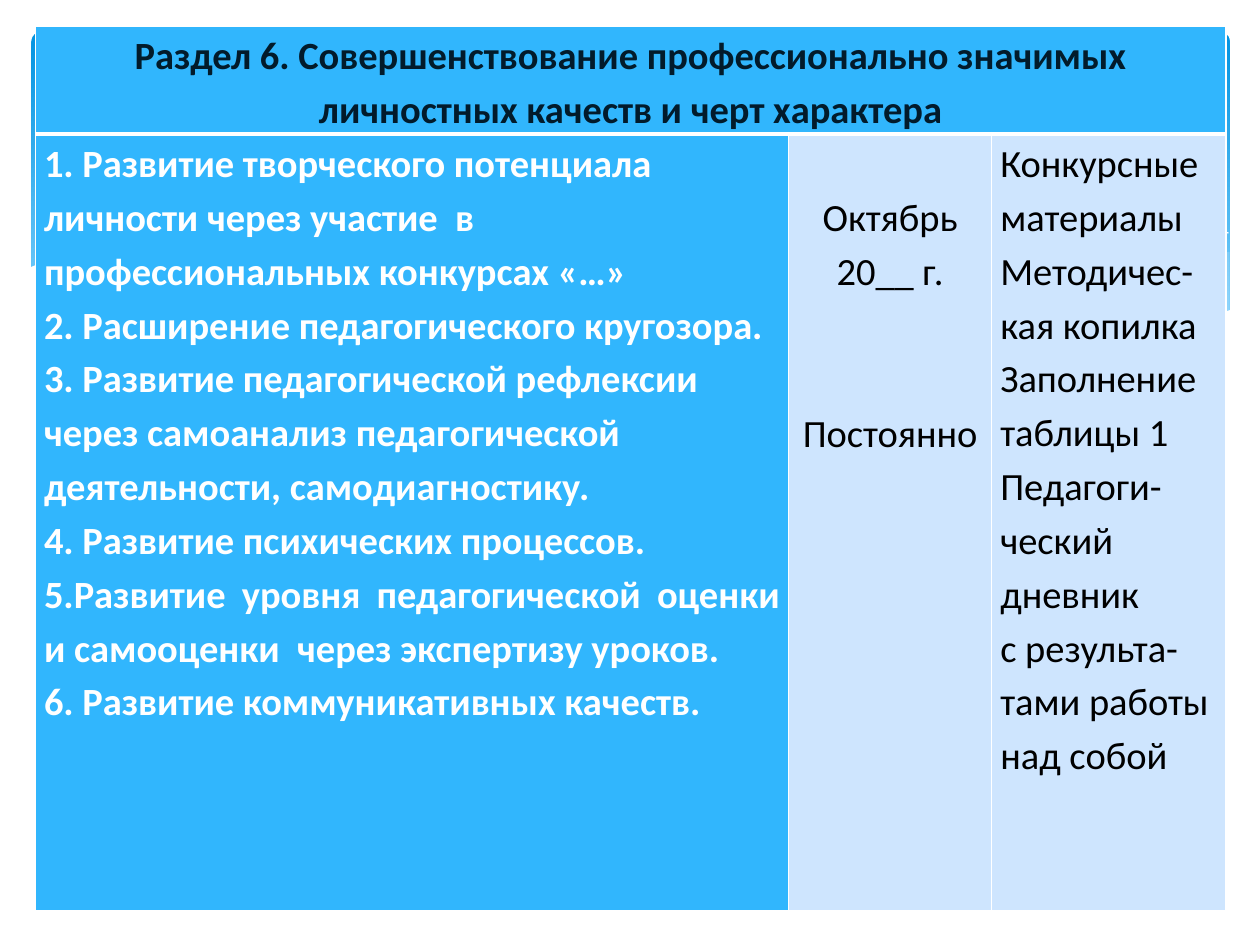
import pptx
import pptx.dml.color
import pptx.enum.shapes
import pptx.enum.text
import pptx.oxml
import pptx.oxml.ns
import pptx.util

Pt = pptx.util.Pt
ALIGN = pptx.enum.text.PP_ALIGN

COLORS = {
    "band_top": "0293E0",
    "band_bottom": "83D3FE",
    "wave": "C6E7FC",
    "white": "FFFFFF",
    "accent": "31B6FD",
    "pale": "CEE5FE",
    "heading": "021B2B",
    "black": "000000",
}

BACK_WAVE = [(684, 126), (602, 143), (524, 161), (458, 173), (518, 180), (568, 182),
             (616, 179), (655, 171), (684.7, 160), (684.7, 126)]
FRONT_WAVE = [(625, 179), (515, 160), (435, 142), (362, 126), (300, 118), (242, 115),
              (188, 119.5), (258, 131), (335, 149), (415, 166), (482, 176), (547, 182),
              (593, 181)]
LONG_CURVE = [(204, 122), (243, 118), (306, 117), (382, 124), (461, 135), (529, 150),
              (580, 163), (635, 178)]
SHORT_CURVE = [(423, 167), (500, 147), (584, 129), (637, 120), (684, 115)]
WHITE_WAVE = [(685.4, 159), (644, 173), (594, 180), (542, 181), (463, 173), (382, 158),
              (304, 140), (227, 124), (162, 116), (109, 114.5), (58, 118), (19, 127),
              (-1.4, 135), (-1.4, 219), (685.4, 219)]

HEADING = ("Раздел 6. Совершенствование профессионально значимых "
           "личностных качеств и черт характера")
TASKS = [
    "1. Развитие творческого потенциала личности через участие  в "
    "профессиональных конкурсах «…»",
    "2. Расширение педагогического кругозора.",
    "3. Развитие педагогической рефлексии через самоанализ педагогической "
    "деятельности, самодиагностику.",
    "4. Развитие психических процессов.",
    "5.Развитие уровня педагогической оценки и самооценки  через экспертизу уроков.",
    "6. Развитие коммуникативных качеств.",
]
JUSTIFIED_TASK = 4
RESULTS = [
    "Конкурсные материалы",
    "Методичес-кая копилка",
    "Заполнение таблицы 1",
    "Педагоги-ческий дневник",
    "с результа-тами работы над собой",
]
LINE_PITCH = 30.9


def rgb(name):
    return pptx.dml.color.RGBColor.from_string(COLORS[name])


def add_curve(slide, left, top, points, fill=None, opacity=100):
    corners = [(Pt(left + x), Pt(top + y)) for x, y in points]
    builder = slide.shapes.build_freeform(*corners[0])
    builder.add_line_segments(corners[1:], close=fill is not None)
    curve = builder.convert_to_shape()
    curve.shadow.inherit = False
    if fill is None:
        curve.fill.background()
        curve.line.color.rgb = rgb("white")
        curve.line.width = Pt(0)
        return
    curve.fill.solid()
    curve.fill.fore_color.rgb = rgb(fill)
    curve.line.fill.background()
    if opacity < 100:
        tint = curve.fill._xPr.find(".//" + pptx.oxml.ns.qn("a:srgbClr"))
        tint.append(pptx.oxml.parse_xml(
            f'<a:alpha {pptx.oxml.ns.nsdecls("a")} val="{opacity * 1000}"/>'))


def add_wave_band(slide, left, top, width, height):
    band = slide.shapes.add_shape(pptx.enum.shapes.MSO_SHAPE.ROUNDED_RECTANGLE,
                                  Pt(left), Pt(top), Pt(width), Pt(height))
    band.adjustments[0] = 0.03
    band.shadow.inherit = False
    band.line.fill.background()
    band.fill.gradient()
    band.fill.gradient_angle = 270
    for stop, color, position in zip(band.fill.gradient_stops,
                                     ("band_top", "band_bottom"), (0, 0.9)):
        stop.color.rgb = rgb(color)
        stop.position = position
    add_curve(slide, left, top, BACK_WAVE, "wave", 29)
    add_curve(slide, left, top, FRONT_WAVE, "wave", 40)
    add_curve(slide, left, top, LONG_CURVE)
    add_curve(slide, left, top, SHORT_CURVE)
    add_curve(slide, left, top, WHITE_WAVE, "white")


def write(paragraph, text, color="black", bold=False, align=ALIGN.LEFT, before=0):
    paragraph.alignment = align
    paragraph.line_spacing = 1.15
    paragraph.space_before = Pt(before)
    run = paragraph.add_run()
    run.text = text
    run.font.name = "Calibri"
    run.font.size = Pt(22)
    run.font.bold = bold
    run.font.color.rgb = rgb(color)


def write_list(cell, texts, formats):
    frame = cell.text_frame
    for index, (text, style) in enumerate(zip(texts, formats)):
        paragraph = frame.add_paragraph() if index else frame.paragraphs[0]
        write(paragraph, text, **style)


def style_cell(cell, fill, top=1, bottom=1):
    properties = cell._tc.get_or_add_tcPr()
    for side, width in (("L", 1), ("R", 1), ("T", top), ("B", bottom)):
        properties.append(pptx.oxml.parse_xml(
            f'<a:ln{side} {pptx.oxml.ns.nsdecls("a")} w="{Pt(width)}"><a:solidFill>'
            f'<a:srgbClr val="{COLORS["white"]}"/></a:solidFill></a:ln{side}>'))
    cell.fill.solid()
    cell.fill.fore_color.rgb = rgb(fill)
    cell.margin_left = cell.margin_right = Pt(5.04)
    cell.margin_top = cell.margin_bottom = 0


def add_plan_table(slide, left, top, column_widths, row_heights):
    plan = slide.shapes.add_table(2, 3, Pt(left), Pt(top),
                                  Pt(sum(column_widths)), Pt(sum(row_heights))).table
    for column, width in zip(plan.columns, column_widths):
        column.width = Pt(width)
    for row, height in zip(plan.rows, row_heights):
        row.height = Pt(height)
    for index, fill in enumerate(("accent", "pale", "pale")):
        style_cell(plan.cell(0, index), "accent", bottom=3)
        style_cell(plan.cell(1, index), fill, top=3)
    heading = plan.cell(0, 0)
    heading.merge(plan.cell(0, 2))
    write(heading.text_frame.paragraphs[0], HEADING,
          color="heading", bold=True, align=ALIGN.CENTER)

    tasks, dates, results = (plan.cell(1, index) for index in range(3))
    write_list(tasks, TASKS, [
        dict(color="white", bold=True,
             align=ALIGN.JUSTIFY if index == JUSTIFIED_TASK else ALIGN.LEFT)
        for index in range(len(TASKS))])
    dates.margin_top = Pt(LINE_PITCH)
    write_list(dates, ["Октябрь 20__ г.", "Постоянно"],
               [dict(align=ALIGN.CENTER),
                dict(align=ALIGN.CENTER, before=2 * LINE_PITCH)])
    write_list(results, RESULTS, [{}] * len(RESULTS))


def main():
    deck = pptx.Presentation()
    deck.slide_width, deck.slide_height = Pt(720), Pt(540)
    slide = deck.slides.add_slide(deck.slide_layouts[6])
    add_wave_band(slide, 18, 18, 684.7, 194.4)
    add_plan_table(slide, 20.16, 15.12, [430.56, 115.92, 133.92], [61.2, 443.52])
    deck.save("out.pptx")


if __name__ == "__main__":
    main()
